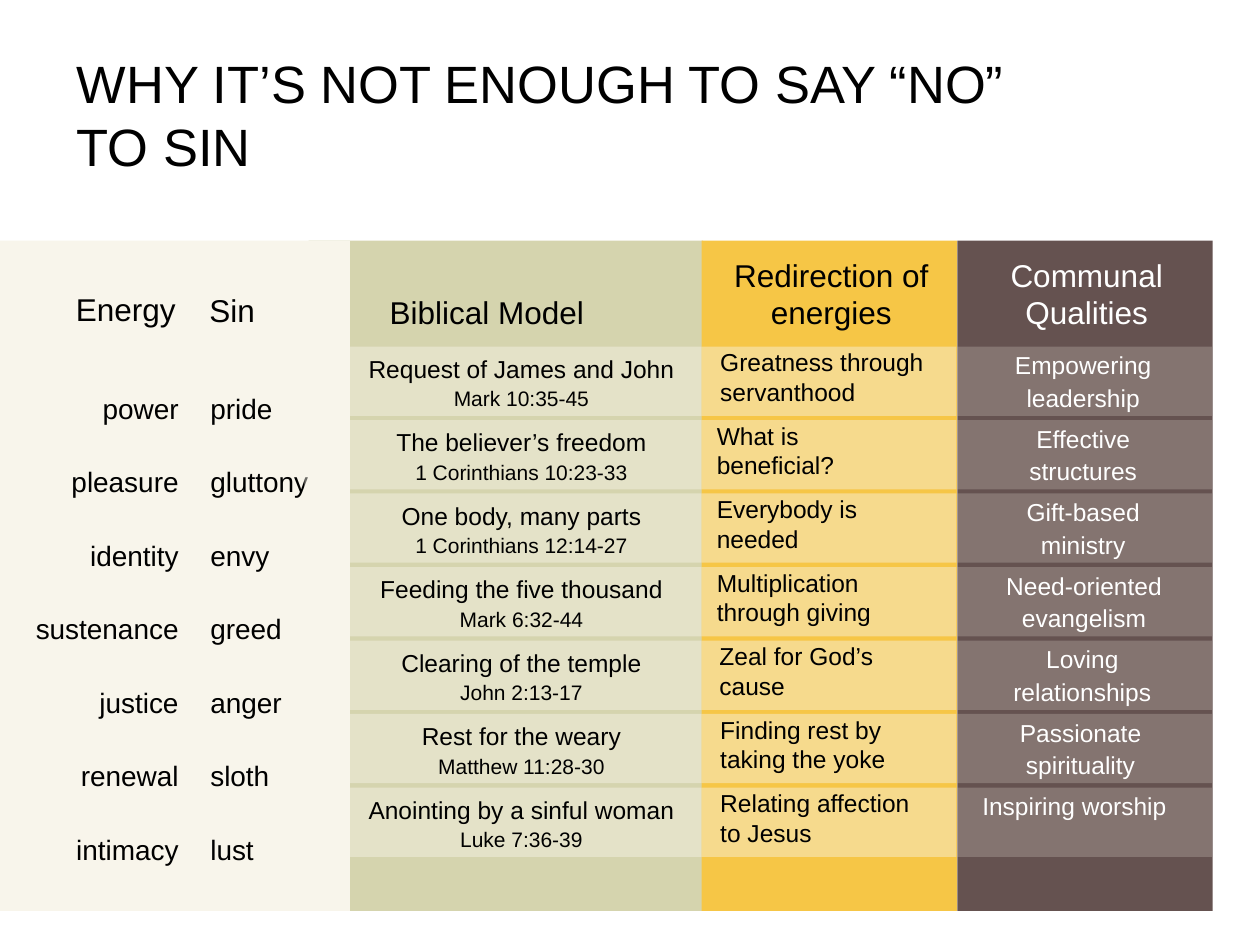
"""Builds a one-slide overview of energies, sins and biblical models."""
from lxml.etree import SubElement
from pptx import Presentation
from pptx.dml.color import RGBColor
from pptx.enum.shapes import MSO_SHAPE
from pptx.enum.text import MSO_ANCHOR, MSO_AUTO_SIZE, PP_ALIGN
from pptx.oxml.ns import qn
from pptx.util import Pt

BLACK = RGBColor(0x00, 0x00, 0x00)
WHITE = RGBColor(0xFF, 0xFF, 0xFF)
CREAM = RGBColor(0xF8, 0xF5, 0xEB)
SAGE = RGBColor(0xD5, 0xD4, 0xAE)
GOLD = RGBColor(0xF6, 0xC6, 0x46)
BROWN = RGBColor(0x65, 0x52, 0x50)

PANEL_TOP, PANEL_HEIGHT = 137.5, 383
BAND_TOP, BAND_HEIGHT, ROW_STEP = 198, 39.6, 42
LEFT, CENTER, RIGHT = PP_ALIGN.LEFT, PP_ALIGN.CENTER, PP_ALIGN.RIGHT

ENERGIES = ["power", "pleasure", "identity", "sustenance", "justice", "renewal", "intimacy"]
SINS = ["pride", "gluttony", "envy", "greed", "anger", "sloth", "lust"]
MODELS = [
    ("Request of James and John", "Mark 10:35-45"),
    ("The believer’s freedom", "1 Corinthians 10:23-33"),
    ("One body, many parts", "1 Corinthians 12:14-27"),
    ("Feeding the five thousand", "Mark 6:32-44"),
    ("Clearing of the temple", "John 2:13-17"),
    ("Rest for the weary", "Matthew 11:28-30"),
    ("Anointing by a sinful woman", "Luke 7:36-39"),
]
REDIRECTIONS = [
    (408, ["Greatness through servanthood"]),
    (406, ["What is", "beneficial?"]),
    (406, ["Everybody is", "needed"]),
    (406, ["Multiplication through giving"]),
    (407.5, ["Zeal for God’s cause"]),
    (408, ["Finding rest by taking the yoke"]),
    (408, ["Relating affection to Jesus"]),
]
QUALITIES = [
    (557, "Empowering leadership"),
    (557, "Effective structures"),
    (557, "Gift-based ministry"),
    (557.5, "Need-oriented evangelism"),
    (556.5, "Loving relationships"),
    (555.5, "Passionate spirituality"),
    (552, "Inspiring worship"),
]


class Deck:
    """Holds the text style and the current slide."""

    font = "Arial"
    inset = Pt(3.6)

    def __init__(self, slide):
        self.slide = slide

    def rect(self, x, y, w, h, color, opacity=100):
        s = self.slide.shapes.add_shape(MSO_SHAPE.RECTANGLE, Pt(x), Pt(y), Pt(w), Pt(h))
        s.shadow.inherit = False
        s.fill.solid()
        s.fill.fore_color.rgb = color
        if opacity < 100:
            clr = s._element.spPr.find(".//" + qn("a:srgbClr"))
            SubElement(clr, qn("a:alpha")).set("val", str(opacity * 1000))
        s.line.fill.background()

    def panel(self, x, w, color):
        self.rect(x, PANEL_TOP, w, PANEL_HEIGHT, color)

    def bands(self, x, w, opacity):
        for i in range(len(MODELS)):
            self.rect(x, BAND_TOP + i * ROW_STEP, w, BAND_HEIGHT, CREAM, opacity)

    def text(self, x, y, w, h, lines, sizes, color=BLACK, align=LEFT,
             spacing=None, gap=0, wrap=True, grow=True, anchor=MSO_ANCHOR.TOP):
        tf = self.slide.shapes.add_textbox(Pt(x), Pt(y), Pt(w), Pt(h)).text_frame
        tf.margin_left = tf.margin_right = tf.margin_top = tf.margin_bottom = self.inset
        tf.word_wrap = wrap
        tf.auto_size = MSO_AUTO_SIZE.SHAPE_TO_FIT_TEXT if grow else MSO_AUTO_SIZE.NONE
        tf.vertical_anchor = anchor
        for i, line in enumerate(lines):
            p = tf.add_paragraph() if i else tf.paragraphs[0]
            p.text = line
            p.alignment = align
            if spacing:
                p.line_spacing = spacing
            if i and gap:
                p.space_before = Pt(gap)
            p.font.name = self.font
            p.font.size = Pt(sizes[min(i, len(sizes) - 1)])
            p.font.color.rgb = color

    def heading(self, x, y, w, h, title, color=BLACK, align=LEFT):
        self.text(x, y, w, h, [title], [18], color, align)

    def word_list(self, x, w, words, align):
        self.text(x, 203, w, 282, words, [16], align=align, spacing=1.9, gap=5.5, wrap=False)


def main():
    prs = Presentation()
    prs.slide_width, prs.slide_height = Pt(720), Pt(540)
    deck = Deck(prs.slides.add_slide(prs.slide_layouts[6]))

    deck.panel(176.4, 225.4, SAGE)
    deck.text(40.3, 22.3, 542, 85.7, ["WHY IT’S NOT ENOUGH TO SAY “NO” TO SIN"], [30],
              grow=False, anchor=MSO_ANCHOR.MIDDLE)
    deck.panel(-13, 213, CREAM)
    deck.heading(116, 163, 99, 28, "Sin")
    deck.heading(5, 162, 99, 28, "Energy", align=RIGHT)
    deck.word_list(13.7, 92, ENERGIES, RIGHT)
    deck.word_list(116.6, 68.4, SINS, LEFT)

    deck.bands(174, 242, 43)
    deck.heading(219, 164, 167, 28, "Biblical Model")
    for i, model in enumerate(MODELS):
        deck.text(181, 197 + i * ROW_STEP, 234, 42, model, [14, 12], align=CENTER, spacing=1.1)

    deck.panel(401, 146, GOLD)
    deck.heading(406, 142.5, 138, 50, "Redirection of energies", align=CENTER)
    deck.bands(401, 145.5, 43)
    for i, (x, lines) in enumerate(REDIRECTIONS):
        deck.text(x, 195 + i * ROW_STEP, 125, 43, lines, [14])

    deck.panel(547, 146, BROWN)
    deck.heading(552, 142.5, 138, 50, "Communal Qualities", WHITE, CENTER)
    deck.bands(547, 145.5, 21)
    for i, (x, quality) in enumerate(QUALITIES):
        deck.text(x, 195 + i * ROW_STEP, 124, 45, [quality], [14], WHITE, CENTER, 1.1)

    prs.save("out.pptx")


if __name__ == "__main__":
    main()
